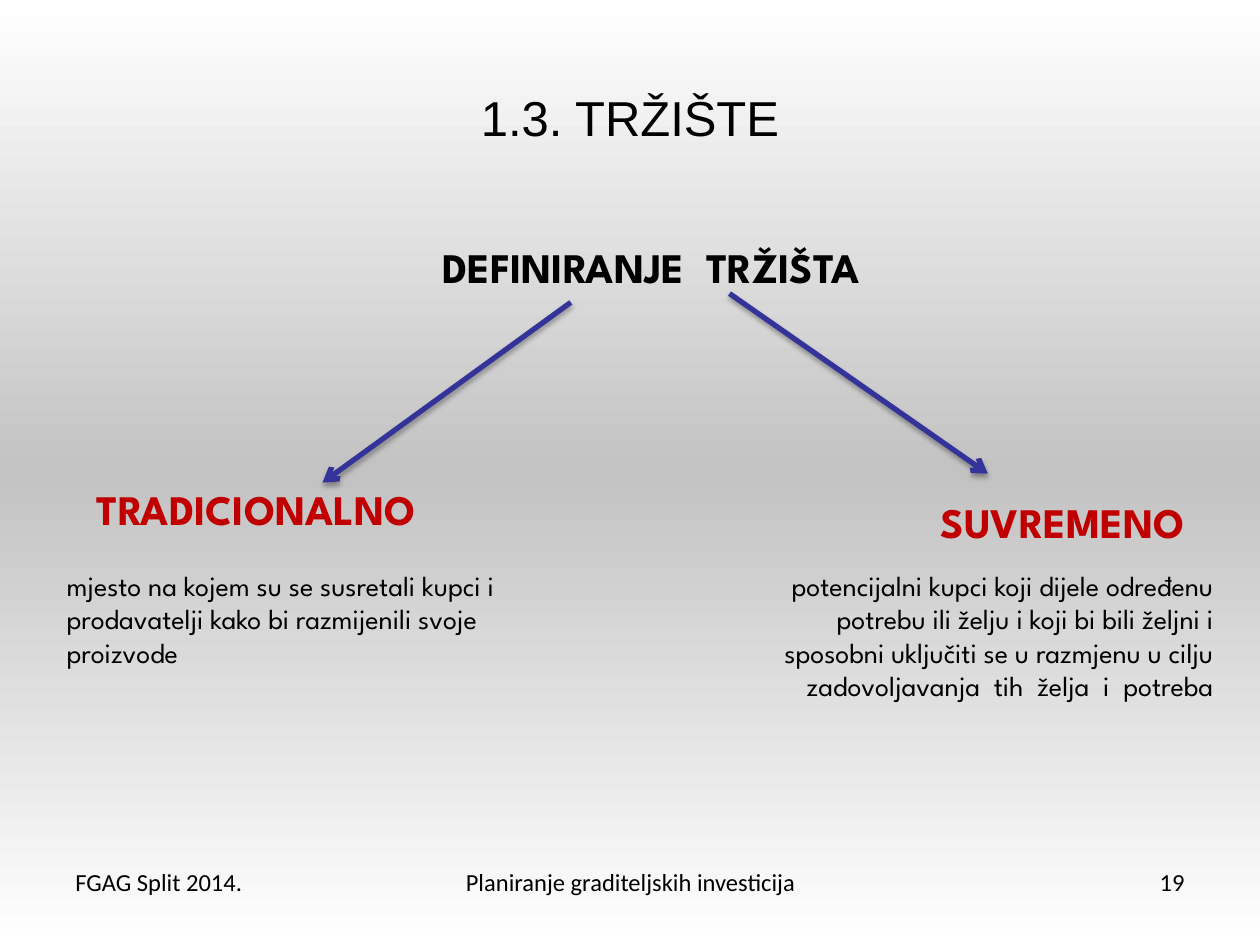
from copy import deepcopy

from lxml import etree
from pptx import Presentation
from pptx.dml.color import RGBColor
from pptx.enum.shapes import MSO_CONNECTOR
from pptx.enum.text import MSO_ANCHOR, PP_ALIGN
from pptx.oxml.ns import qn
from pptx.util import Inches, Pt

COLORS = {"text": "000000", "head": "C00000", "arrow": "333399",
          "edge": "FFFFFF", "mid": "C3C3C3"}
SPARTAN = "League Spartan"
LEFT, MID, RIGHT = PP_ALIGN.LEFT, PP_ALIGN.CENTER, PP_ALIGN.RIGHT


def color(name):
    return RGBColor.from_string(COLORS[name])


class Deck:
    def __init__(self):
        self.file = Presentation()
        self.file.slide_width, self.file.slide_height = Inches(10), Inches(7.5)
        self.slide = self.file.slides.add_slide(self.file.slide_layouts[6])

    def backdrop(self):
        """Fade from the edge colour to the middle one and back, top to bottom."""
        fill = self.slide.background.fill
        fill.gradient()
        fill.gradient_angle = 90
        stops = fill.gradient_stops
        for stop, name, pos in zip(stops, ("edge", "mid"), (0, 0.5)):
            stop.color.rgb = color(name)
            stop.position = pos
        bg = self.slide.background._cSld.find(qn("p:bg"))
        row = bg.find(".//" + qn("a:gsLst"))
        last = deepcopy(row[0])
        last.set("pos", "100000")
        row.append(last)

    def text(self, words, box, size, font, align=LEFT, tint="text",
             bold=False, anchor=MSO_ANCHOR.TOP):
        frame = self.slide.shapes.add_textbox(*map(Inches, box)).text_frame
        frame.word_wrap = True
        frame.vertical_anchor = anchor
        para = frame.paragraphs[0]
        para.text = words
        para.alignment = align
        para.font.size = Pt(size)
        para.font.name = font
        para.font.bold = bold
        para.font.color.rgb = color(tint)

    def head(self, words, box, align=LEFT, tint="head"):
        self.text(words, box, 24, SPARTAN, align, tint, True)

    def arrow(self, start, end):
        """Draw a line with an open arrowhead at its end and a soft shadow."""
        line = self.slide.shapes.add_connector(
            MSO_CONNECTOR.STRAIGHT, *map(Inches, start + end))
        line.line.width = Pt(3)
        line.line.color.rgb = color("arrow")
        props = line._element.spPr
        tail = etree.SubElement(props.find(qn("a:ln")), qn("a:tailEnd"))
        tail.set("type", "arrow")
        group = etree.SubElement(props, qn("a:effectLst"))
        shade = etree.SubElement(group, qn("a:outerShdw"), blurRad=str(Pt(3.1)),
                                 dist=str(Pt(1.8)), dir="5400000", rotWithShape="0")
        tint = etree.SubElement(shade, qn("a:srgbClr"), val=COLORS["text"])
        etree.SubElement(tint, qn("a:alpha"), val="35000")


def main():
    deck = Deck()
    deck.backdrop()
    deck.text("1.3. TRŽIŠTE", (0.5, 0.3, 9, 1.25), 28, "Arial", MID,
              anchor=MSO_ANCHOR.MIDDLE)

    deck.head("DEFINIRANJE  TRŽIŠTA", (0.67, 1.87, 9, 0.52), MID, "text")
    deck.head("TRADICIONALNO", (0.67, 3.79, 3.47, 0.52))
    deck.head("SUVREMENO", (6.6, 3.89, 2.9, 0.52), RIGHT)
    deck.arrow((4.53, 2.4), (2.56, 3.83))
    deck.arrow((5.79, 2.33), (7.84, 3.76))

    deck.text("mjesto na kojem su se susretali kupci i prodavatelji kako bi "
              "razmijenili svoje proizvode",
              (0.43, 4.46, 3.71, 0.91), 16, SPARTAN)
    deck.text("potencijalni kupci koji dijele određenu potrebu ili želju i "
              "koji bi bili željni i sposobni uključiti se u razmjenu u cilju "
              "zadovoljavanja  tih  želja  i  potreba",
              (6.02, 4.46, 3.71, 1.45), 16, SPARTAN, RIGHT)

    for words, left, width, align in (
            ("FGAG Split 2014.", 0.5, 2.33, LEFT),
            ("Planiranje graditeljskih investicija", 3.42, 3.17, MID),
            ("19", 7.17, 2.33, RIGHT)):
        deck.text(words, (left, 6.83, width, 0.52), 14, "Calibri", align)
    deck.file.save("out.pptx")


if __name__ == "__main__":
    main()
